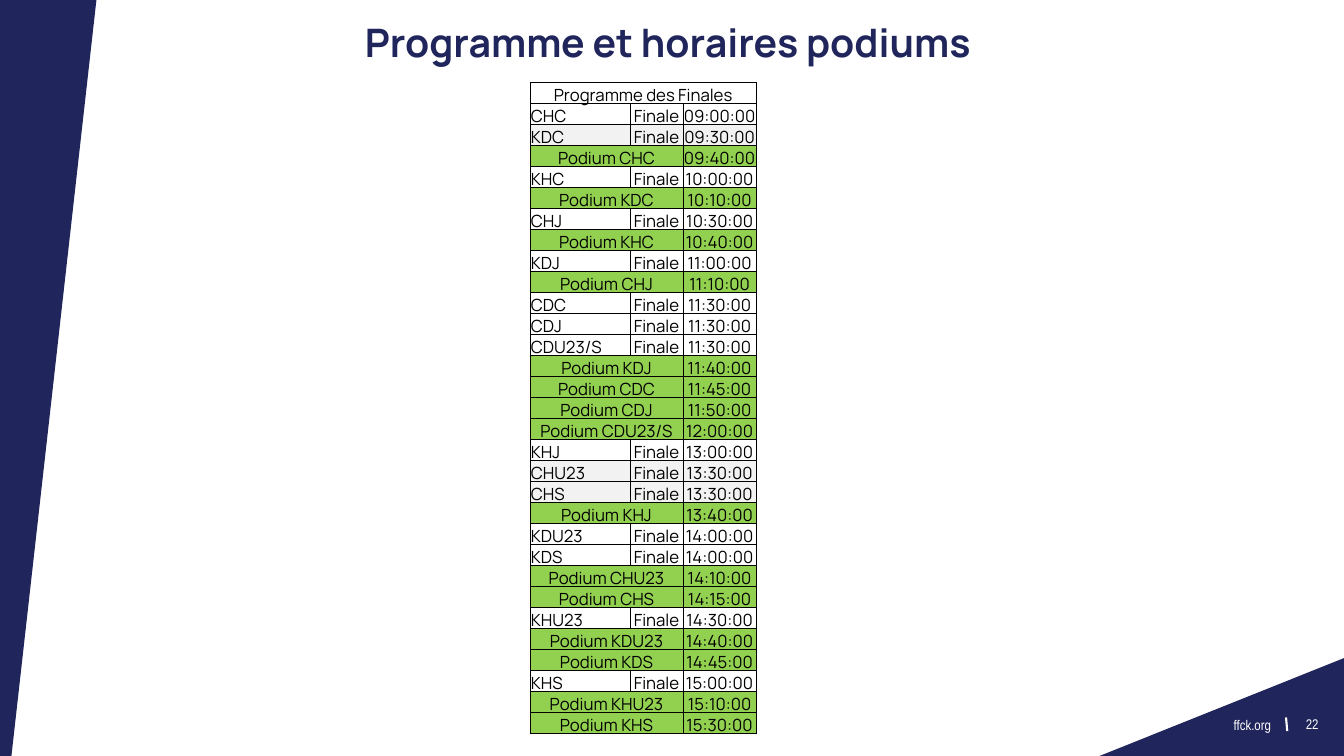
from dataclasses import dataclass

from lxml.etree import SubElement
from pptx import Presentation
from pptx.dml.color import RGBColor
from pptx.enum.shapes import MSO_CONNECTOR
from pptx.enum.text import MSO_ANCHOR, MSO_AUTO_SIZE, PP_ALIGN
from pptx.oxml.ns import qn
from pptx.util import Cm, Pt


@dataclass(frozen=True)
class Theme:
    navy: RGBColor = RGBColor(0x20, 0x26, 0x5B)
    white: RGBColor = RGBColor(0xFF, 0xFF, 0xFF)
    black: RGBColor = RGBColor(0x00, 0x00, 0x00)
    green: RGBColor = RGBColor(0x92, 0xD0, 0x50)
    grey: RGBColor = RGBColor(0xF2, 0xF2, 0xF2)
    main_font: str = "Manrope"
    footer_font: str = "Arial Narrow"
    title_size: Pt = Pt(28)
    table_size: Pt = Pt(12)
    footer_size: Pt = Pt(10)
    border_width: Pt = Pt(0.5)


THEME = Theme()

LEFT_BAND = [(2.44, -0.08), (-0.05, -0.08), (-0.03, 19.13), (0.28, 19.13)]
RIGHT_CORNER = [(33.93, 16.56), (27.51, 19.13), (33.93, 19.1)]

SCHEDULE = [
    ("CHC", "09:00:00"),
    ("KDC", "09:30:00"),
    ("Podium CHC", "09:40:00"),
    ("KHC", "10:00:00"),
    ("Podium KDC", "10:10:00"),
    ("CHJ", "10:30:00"),
    ("Podium KHC", "10:40:00"),
    ("KDJ", "11:00:00"),
    ("Podium CHJ", "11:10:00"),
    ("CDC", "11:30:00"),
    ("CDJ", "11:30:00"),
    ("CDU23/S", "11:30:00"),
    ("Podium KDJ", "11:40:00"),
    ("Podium CDC", "11:45:00"),
    ("Podium CDJ", "11:50:00"),
    ("Podium CDU23/S", "12:00:00"),
    ("KHJ", "13:00:00"),
    ("CHU23", "13:30:00"),
    ("CHS", "13:30:00"),
    ("Podium KHJ", "13:40:00"),
    ("KDU23", "14:00:00"),
    ("KDS", "14:00:00"),
    ("Podium CHU23", "14:10:00"),
    ("Podium CHS", "14:15:00"),
    ("KHU23", "14:30:00"),
    ("Podium KDU23", "14:40:00"),
    ("Podium KDS", "14:45:00"),
    ("KHS", "15:00:00"),
    ("Podium KHU23", "15:10:00"),
    ("Podium KHS", "15:30:00"),
]
SHADED_FINALS = {"KDC", "CHU23", "CHS"}
COLUMN_WIDTHS = [2.52, 1.33, 1.85]
TABLE_HEIGHT = 16.36


def format_text(text_frame, text, font, size, color, align, bold=False):
    text_frame.text = text
    para = text_frame.paragraphs[0]
    para.alignment = align
    for span in para.runs:
        span.font.name = font
        span.font.size = size
        span.font.bold = bold
        span.font.color.rgb = color


def add_polygon(page, points):
    corners = [(Cm(x), Cm(y)) for x, y in points]
    builder = page.shapes.build_freeform(*corners[0], scale=1.0)
    builder.add_line_segments(corners[1:], close=True)
    polygon = builder.convert_to_shape()
    polygon.shadow.inherit = False
    polygon.fill.solid()
    polygon.fill.fore_color.rgb = THEME.navy
    polygon.line.fill.background()


def add_text(page, place, text, font, size, color, align, bold=False):
    box = page.shapes.add_textbox(*(Cm(length) for length in place))
    frame = box.text_frame
    frame.word_wrap = True
    frame.auto_size = MSO_AUTO_SIZE.SHAPE_TO_FIT_TEXT
    format_text(frame, text, font, size, color, align, bold)
    return frame


def add_footer(page):
    style = (THEME.footer_font, THEME.footer_size, THEME.white)
    number = add_text(page, (32.41, 17.91, 1.78, 0.69), "22", *style, PP_ALIGN.LEFT)
    number.margin_left = Cm(0.5)
    divider = page.shapes.add_connector(
        MSO_CONNECTOR.STRAIGHT, Cm(32.41), Cm(18.08), Cm(32.44), Cm(18.42)
    )
    divider.line.color.rgb = THEME.white
    divider.line.width = Pt(1.5)
    SubElement(divider.element.spPr, qn("a:effectLst"))
    site = add_text(page, (30.12, 17.93, 2.41, 0.69), "ffck.org", *style, PP_ALIGN.RIGHT)
    site.margin_right = Cm(0.5)


def add_borders(cell):
    properties = cell._tc.get_or_add_tcPr()
    for position, side in enumerate(("a:lnL", "a:lnR", "a:lnT", "a:lnB")):
        border = properties.makeelement(qn(side), {"w": str(THEME.border_width)})
        fill = SubElement(border, qn("a:solidFill"))
        SubElement(fill, qn("a:srgbClr"), val=str(THEME.black))
        properties.insert(position, border)


def format_cell(cell, text, fill, align):
    cell.margin_left = cell.margin_right = cell.margin_top = Cm(0.02)
    cell.margin_bottom = 0
    cell.vertical_anchor = MSO_ANCHOR.BOTTOM
    if fill is None:
        cell.fill.background()
    else:
        cell.fill.solid()
        cell.fill.fore_color.rgb = fill
    add_borders(cell)
    format_text(
        cell.text_frame, text, THEME.main_font, THEME.table_size, THEME.black, align
    )


def fill_row(table, row, texts, fill, merged, first_align):
    if merged > 1:
        table.cell(row, 0).merge(table.cell(row, merged - 1))
    for column, text in enumerate(texts):
        align = PP_ALIGN.CENTER if column else first_align
        format_cell(table.cell(row, column), text, fill, align)


def add_schedule(page):
    row_count = len(SCHEDULE) + 1
    frame = page.shapes.add_table(
        row_count, len(COLUMN_WIDTHS), Cm(13.36), Cm(2.08),
        Cm(sum(COLUMN_WIDTHS)), Cm(TABLE_HEIGHT),
    )
    table = frame.table
    table.first_row = False
    table.horz_banding = False
    for column, width in zip(table.columns, COLUMN_WIDTHS):
        column.width = Cm(width)
    for row in table.rows:
        row.height = Cm(TABLE_HEIGHT / row_count)

    fill_row(table, 0, ("Programme des Finales", "", ""), None, 3, PP_ALIGN.CENTER)
    for row, (label, time) in enumerate(SCHEDULE, start=1):
        if label.startswith("Podium"):
            fill_row(table, row, (label, "", time), THEME.green, 2, PP_ALIGN.CENTER)
        else:
            fill = THEME.grey if label in SHADED_FINALS else None
            fill_row(table, row, (label, "Finale", time), fill, 1, PP_ALIGN.LEFT)


def main():
    deck = Presentation()
    deck.slide_width, deck.slide_height = Cm(33.87), Cm(19.05)
    page = deck.slides.add_slide(deck.slide_layouts[6])
    add_polygon(page, LEFT_BAND)
    add_polygon(page, RIGHT_CORNER)
    add_footer(page)
    add_text(
        page, (3.96, 0.33, 25.73, 1.45), "Programme et horaires podiums",
        THEME.main_font, THEME.title_size, THEME.navy, PP_ALIGN.CENTER, bold=True,
    )
    add_schedule(page)
    deck.save("out.pptx")


if __name__ == "__main__":
    main()
